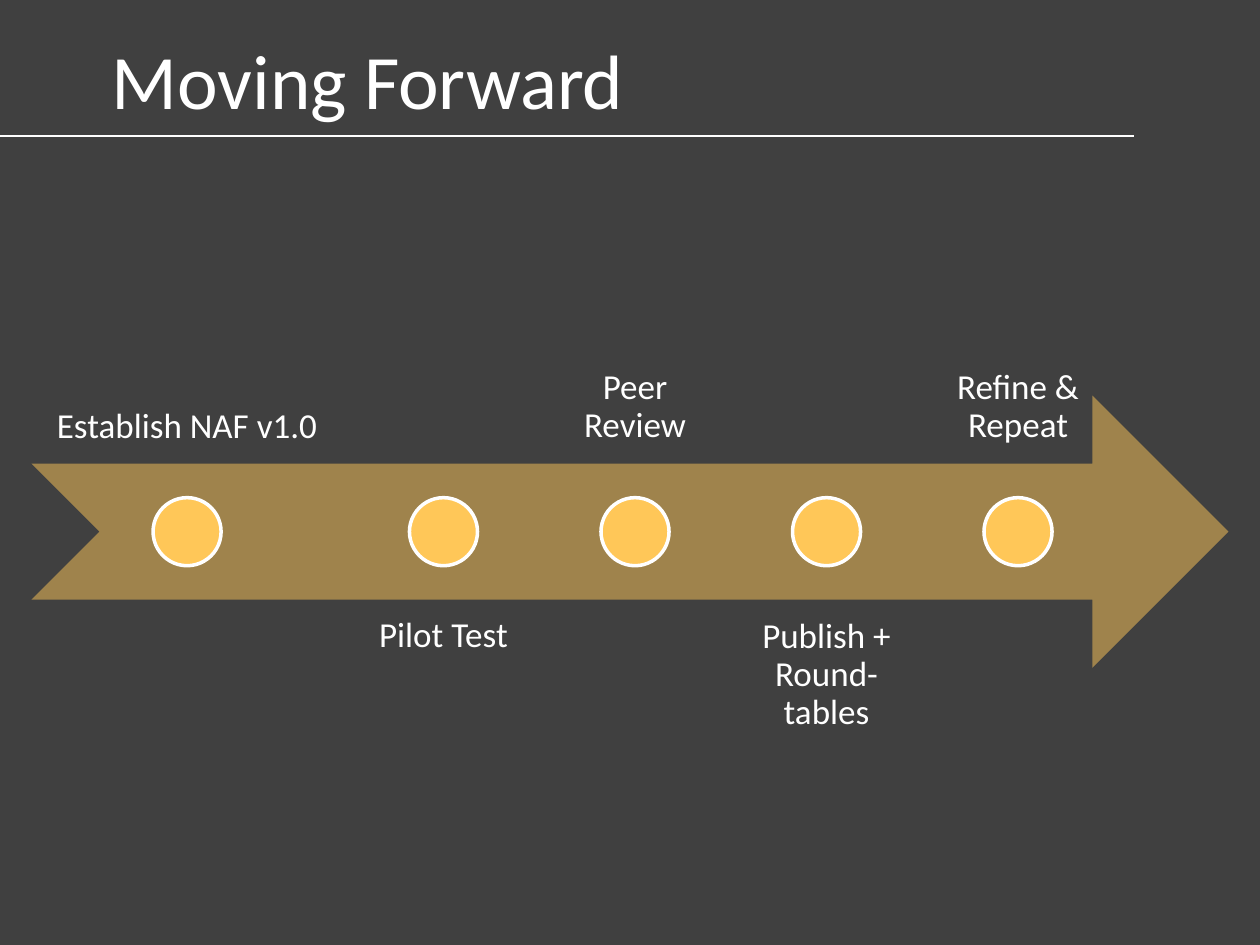
from lxml.etree import SubElement
from pptx import Presentation
from pptx.dml.color import RGBColor
from pptx.enum.shapes import MSO_CONNECTOR as Link, MSO_SHAPE as Form
from pptx.enum.text import MSO_ANCHOR as Anchor, PP_ALIGN as Align
from pptx.oxml.ns import qn
from pptx.util import Inches, Pt

DARK = RGBColor(0x40, 0x40, 0x40)
GOLD = RGBColor(0xFF, 0xC7, 0x58)
WHITE = RGBColor(0xFF, 0xFF, 0xFF)

TITLE = "Moving Forward"
STEPS = [
    ("Establish NAF v1.0", 2.47),
    ("Pilot Test", 1.44),
    ("Peer Review", 1.44),
    ("Publish + Round-tables", 1.44),
    ("Refine & Repeat", 1.44),
]
LEFT, TOP, BAND = 0.25, 1.53, 2.16
GAP, DOT = 0.08, 0.54
MID = 4.22


def add_text(slide, text, box, size=20, anchor=Anchor.MIDDLE, pad=0.16, space=0.9):
    frame = slide.shapes.add_textbox(*map(Inches, box)).text_frame
    frame.word_wrap = True
    frame.vertical_anchor = anchor
    frame.margin_left = frame.margin_right = Inches(pad)
    frame.margin_top = frame.margin_bottom = Inches(pad)
    para = frame.paragraphs[0]
    para.alignment = Align.CENTER
    para.line_spacing = space
    run = para.add_run()
    run.text = text
    run.font.name = "Calibri"
    run.font.size = Pt(size)
    run.font.color.rgb = WHITE


def add_form(slide, form, box):
    shape = slide.shapes.add_shape(form, *map(Inches, box))
    shape.shadow.inherit = False
    shape.fill.solid()
    shape.fill.fore_color.rgb = GOLD
    return shape


def add_arrow(slide):
    arrow = add_form(slide, Form.NOTCHED_RIGHT_ARROW, (LEFT, MID - BAND / 2, 9.5, BAND))
    arrow.line.fill.background()
    tint = arrow.fill._xPr.find(f".//{qn('a:srgbClr')}")
    SubElement(tint, qn("a:alpha"), val="50000")


def add_steps(slide):
    left = LEFT
    for i, (name, width) in enumerate(STEPS):
        above = i % 2 == 0
        top = TOP if above else 2 * MID - TOP - BAND
        anchor = Anchor.BOTTOM if above else Anchor.TOP
        add_text(slide, name, (left, top, width, BAND), anchor=anchor)
        spot = (left + (width - DOT) / 2, MID - DOT / 2, DOT, DOT)
        dot = add_form(slide, Form.OVAL, spot)
        dot.line.color.rgb = WHITE
        dot.line.width = Pt(2)
        left += width + GAP


def add_rule(slide):
    ends = map(Inches, (0, 1.08, 9, 1.08))
    rule = slide.shapes.add_connector(Link.STRAIGHT, *ends)
    rule.line.color.rgb = WHITE
    rule.line.width = Pt(1.5)
    SubElement(rule._element.spPr, qn("a:effectLst"))


def main():
    deck = Presentation()
    deck.slide_width, deck.slide_height = Inches(10), Inches(7.5)
    slide = deck.slides.add_slide(deck.slide_layouts[6])
    slide.background.fill.solid()
    slide.background.fill.fore_color.rgb = DARK
    add_text(slide, TITLE, (-1.58, 0, 9, 1.25), size=44, pad=0.05, space=1)
    add_arrow(slide)
    add_steps(slide)
    add_rule(slide)
    deck.save("out.pptx")


if __name__ == "__main__":
    main()
